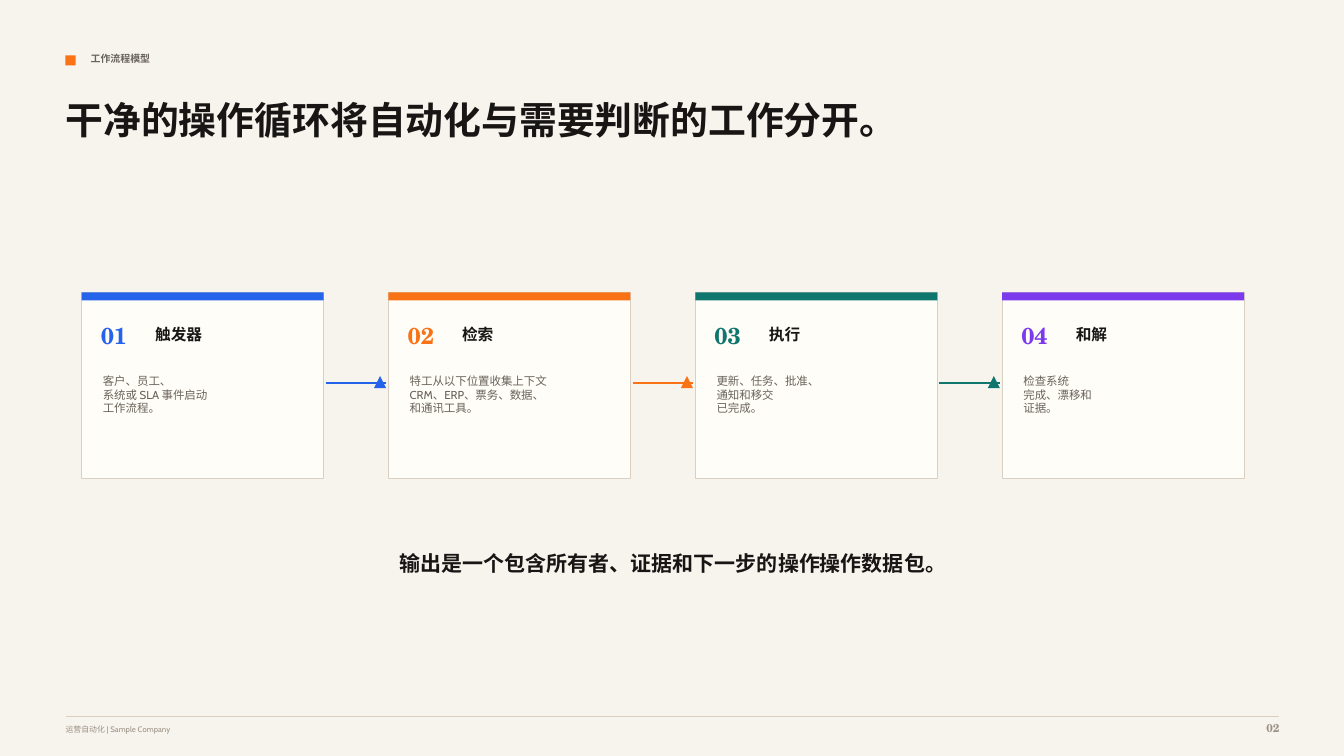
"""Build a slide of a four-step workflow."""
import lxml.etree
import pptx
import pptx.dml.color
import pptx.enum.shapes
import pptx.enum.text
import pptx.oxml.ns
import pptx.util

Inches = pptx.util.Inches
Kind = pptx.enum.shapes.MSO_SHAPE
Align = pptx.enum.text.PP_ALIGN


class Theme:
    """Hold the colours and the text formats."""
    page, card, edge = "F7F4EE", "FFFDF8", "D9D0C3"
    ink, soft, pale = "171614", "69635A", "9A9184"
    blue, orange, green, violet = "2563EB", "F97316", "0F766E", "7C3AED"
    sans, serif = "Cabin", "TeX Gyre Schola"
    text = {
        "label": {"name": sans, "size": 7.1, "bold": True},
        "title": {"name": serif, "size": 27, "bold": True},
        "number": {"name": serif, "size": 16.5, "bold": True},
        "head": {"name": sans, "size": 11.2, "bold": True},
        "body": {"name": sans, "size": 8.2, "bold": False},
        "result": {"name": serif, "size": 15, "bold": True},
        "foot": {"name": sans, "size": 5.6, "bold": False},
        "page": {"name": serif, "size": 8.2, "bold": True},
    }


class Deck:
    """Draw styled elements on the current slide."""

    def __init__(self, theme):
        self.theme = theme
        self.show = pptx.Presentation()
        self.show.slide_width = Inches(13.33)
        self.show.slide_height = Inches(7.5)
        self.slide = self.show.slides.add_slide(self.show.slide_layouts[6])
        self.paint(self.slide.background.fill, theme.page)

    def paint(self, fill, color):
        """Set a solid fill."""
        fill.solid()
        fill.fore_color.rgb = pptx.dml.color.RGBColor.from_string(color)

    def shape(self, x, y, w, h, color, edge=None, kind=Kind.RECTANGLE):
        """Add a filled shape with an optional outline."""
        item = self.slide.shapes.add_shape(kind, *map(Inches, (x, y, w, h)))
        item.shadow.inherit = False
        self.paint(item.fill, color)
        if edge:
            self.paint(item.line.fill, edge)
            item.line.width = pptx.util.Pt(0.75)
        else:
            item.line.fill.background()

    def line(self, x, y, w, color, weight):
        """Add a level line."""
        item = self.slide.shapes.add_connector(
            pptx.enum.shapes.MSO_CONNECTOR.STRAIGHT,
            *map(Inches, (x, y, x + w, y)))
        self.paint(item.line.fill, color)
        item.line.width = pptx.util.Pt(weight)
        lxml.etree.SubElement(item._element.spPr,
                              pptx.oxml.ns.qn("a:effectLst"))

    def text(self, x, y, w, h, lines, style, color, align=Align.LEFT):
        """Add a text box with one paragraph per line."""
        box = self.slide.shapes.add_textbox(*map(Inches, (x, y, w, h)))
        frame = box.text_frame
        frame.word_wrap = True
        for side in ("left", "top", "right", "bottom"):
            setattr(frame, f"margin_{side}", 0)
        frame.text = lines
        for para in frame.paragraphs:
            para.alignment = align
            for run in para.runs:
                for key, value in self.theme.text[style].items():
                    if key == "size":
                        value = pptx.util.Pt(value)
                    setattr(run.font, key, value)
                self.paint(run.font.fill, color)

    def step(self, x, number, head, body, color):
        """Add a card with its number, heading and body."""
        top = 2.9
        self.shape(x, top, 2.4, 1.85, self.theme.card, self.theme.edge)
        self.shape(x, top, 2.4, 0.08, color)
        self.text(x + 0.19, top + 0.29, 0.46, 0.29, number, "number", color)
        self.text(x + 0.73, top + 0.32, 1.33, 0.21, head, "head",
                  self.theme.ink)
        self.text(x + 0.21, top + 0.81, 1.92, 0.71, body, "body",
                  self.theme.soft)

    def arrow(self, x, color):
        """Add a line with a triangle at its end."""
        self.line(x, 3.8, 0.6, color, 1.7)
        self.shape(x + 0.48, 3.73, 0.12, 0.12, color,
                   kind=Kind.ISOSCELES_TRIANGLE)


def main():
    """Build and save the slide."""
    theme = Theme()
    deck = Deck(theme)
    left, width = 0.65, 12.04
    deck.shape(left, 0.55, 0.1, 0.1, theme.orange)
    deck.text(0.9, 0.52, 6.46, 0.19, "工作流程模型", "label", theme.soft)
    deck.text(left, 0.96, 9.38, 1.08,
              "干净的操作循环将自动化与需要判断的工作分开。", "title", theme.ink)

    steps = [
        ("触发器", "客户、员工、\n系统或 SLA 事件启动\n工作流程。", theme.blue),
        ("检索", "特工从以下位置收集上下文\nCRM、ERP、票务、数据、\n和通讯工具。",
         theme.orange),
        ("执行", "更新、任务、批准、\n通知和移交\n已完成。", theme.green),
        ("和解", "检查系统\n完成、漂移和\n证据。", theme.violet),
    ]
    first, last = 0.81, 9.94
    pitch = (last - first) / (len(steps) - 1)
    for i, (head, body, color) in enumerate(steps):
        x = first + i * pitch
        deck.step(x, f"{i + 1:02}", head, body, color)
        if i < len(steps) - 1:
            deck.arrow(x + 2.42, color)

    deck.text(1.83, 5.46, 9.69, 0.44,
              "输出是一个包含所有者、证据和下一步的操作操作数据包。",
              "result", theme.ink, Align.CENTER)
    deck.line(left, 7.11, width, theme.edge, 0.75)
    deck.text(left, 7.19, 7.92, 0.15, "运营自动化 | Sample Company",
              "foot", theme.pale)
    deck.text(12.19, 7.15, 0.5, 0.19, "02", "page", theme.pale, Align.RIGHT)
    deck.show.save("out.pptx")


if __name__ == "__main__":
    main()
